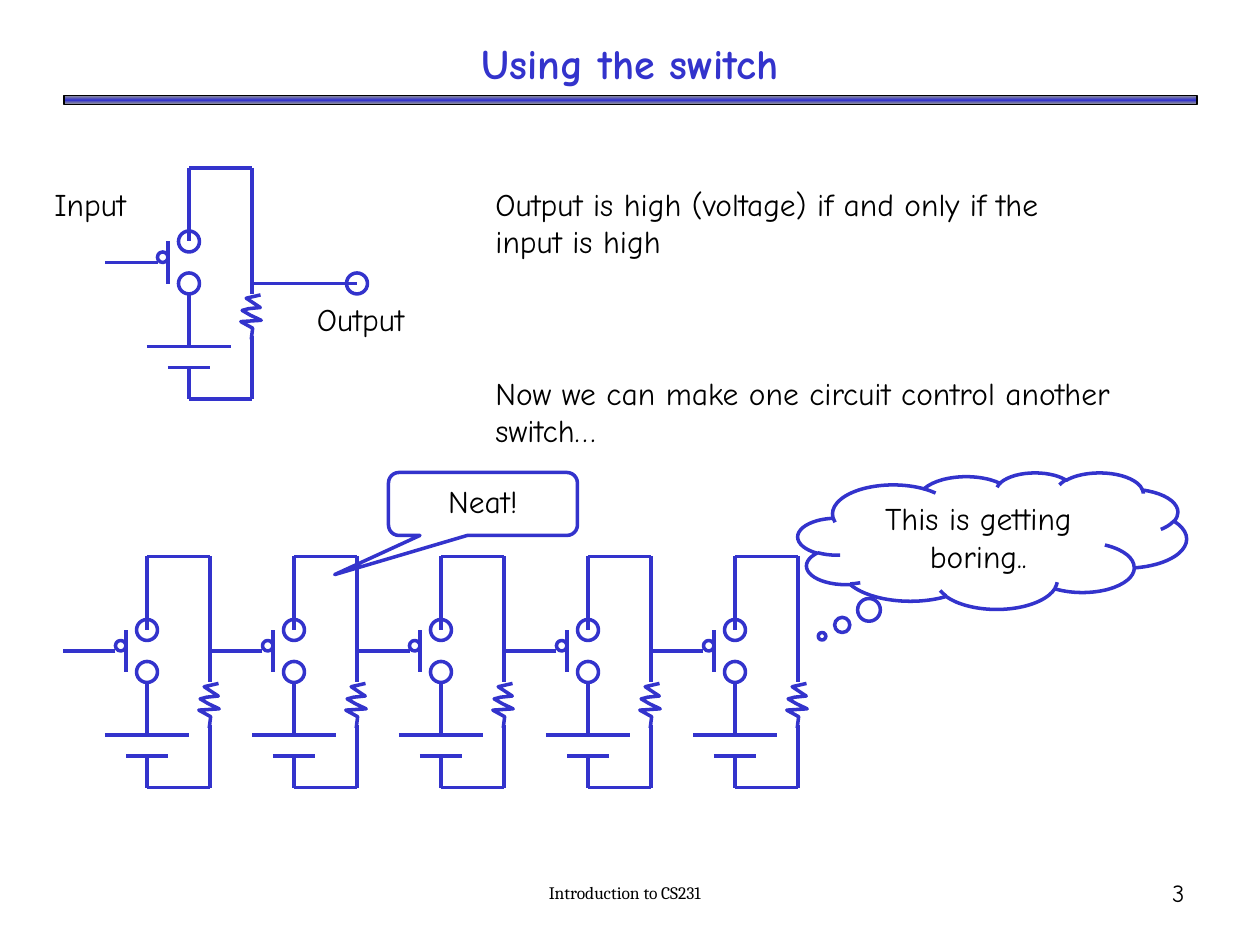
import copy
from dataclasses import dataclass

import lxml.etree
import pptx
import pptx.dml.color
import pptx.enum.shapes
import pptx.enum.text
import pptx.oxml.ns
import pptx.util

Cm = pptx.util.Cm
Align = pptx.enum.text.PP_ALIGN
Anchor = pptx.enum.text.MSO_ANCHOR
Shape = pptx.enum.shapes.MSO_SHAPE


@dataclass(frozen=True)
class Theme:
    ink: str = "000000"
    accent: str = "3333CC"
    rule_edge: str = "969696"
    font: str = "Comic Neue"
    footer_font: str = "Cambria"
    title_size: int = 24
    text_size: int = 18
    number_size: int = 14
    footer_size: int = 10
    wire_width: int = 2


THEME = Theme()

# Content: every position and size is in grid steps, twelve to the inch
STEP = 2.54 / 12
TITLE = ("Using the switch", (6, 3, 108, 6))
TITLE_RULE = (6.1, 9.1, 107.9, 0.85)
FOOTER = ("Introduction to CS231", (36, 82, 47, 6))
PAGE_NUMBER = ("3", (89, 82, 25, 6))
NOTES = [
    ("Output", (29, 28, 14, 4.8)),
    ("Input", (4, 17, 12, 4.8)),
    ("Output is high (voltage) if and only if the input is high", (46, 17, 57, 8.4)),
    ("Now we can make one circuit control another switch…", (46, 35, 64, 8.4)),
]
CALLOUTS = [
    ("Neat!", Shape.ROUNDED_RECTANGULAR_CALLOUT, (37, 45, 18, 6), (-0.785, 1.122, 0.167)),
    ("This is getting boring..", Shape.CLOUD_CALLOUT, (76, 45, 37, 13), (-0.438, 0.7)),
]

# One switch circuit, measured from its input wire's left end and its top wire
CIRCUIT_WIRES = [
    (8, 0, 8, 7), (8, 0, 14, 0), (14, 0, 14, 12),         # top loop
    (14, 16, 14, 22), (8, 22, 14, 22), (8, 19, 8, 22),    # bottom loop
    (8, 12, 8, 17), (4, 17, 12, 17), (6, 19, 10, 19),     # battery
    (6, 11, 6, 7), (5, 9, 0, 9),                          # switch bar and input
]
CIRCUIT_RINGS = [(7, 6, 2), (7, 10, 2), (5, 8, 1)]        # left, top, diameter
RESISTOR_CORNER = (13, 12)
RESISTOR_TILT = 7
RESISTOR_POINTS = [                                       # hundredths of an inch
    (13, 0), (2, 4), (14, 10), (5, 12), (0, 14),
    (7, 17), (16, 20), (0, 23), (10, 27), (10, 36),
]

SINGLE_CIRCUIT = (10, 16)
OUTPUT_WIRE = (24, 27, 34, 27)
OUTPUT_RING = (33, 26, 2)
CHAIN_START = (6, 53)
CHAIN_PITCH = 14
CHAIN_LENGTH = 5


def grid(*steps):
    return [Cm(step * STEP) for step in steps]


def color(code):
    return pptx.dml.color.RGBColor.from_string(code)


def outline(shape):
    shape.line.color.rgb = color(THEME.accent)
    shape.line.width = pptx.util.Pt(THEME.wire_width)


def hollow(shape):
    shape.shadow.inherit = False
    shape.fill.background()
    outline(shape)


def write(shape, text, size=THEME.text_size, align=Align.LEFT, anchor=Anchor.TOP,
          font=THEME.font, ink=THEME.ink, bold=False):
    frame = shape.text_frame
    frame.word_wrap = True
    frame.auto_size = pptx.enum.text.MSO_AUTO_SIZE.NONE
    frame.vertical_anchor = anchor
    frame.text = text
    para = frame.paragraphs[0]
    para.alignment = align
    para.font.name = font
    para.font.size = pptx.util.Pt(size)
    para.font.bold = bold
    para.font.color.rgb = color(ink)


def add_wire(shapes, ends):
    wire = shapes.add_connector(pptx.enum.shapes.MSO_CONNECTOR.STRAIGHT, *grid(*ends))
    outline(wire)
    lxml.etree.SubElement(wire._element.spPr, pptx.oxml.ns.qn("a:effectLst"))


def add_ring(shapes, left, top, diameter):
    hollow(shapes.add_shape(Shape.OVAL, *grid(left, top, diameter, diameter)))


def add_resistor(shapes, left, top):
    points = [(Cm(left * STEP + x * 0.0254), Cm(top * STEP + y * 0.0254))
              for x, y in RESISTOR_POINTS]
    builder = shapes.build_freeform(*points[0], scale=1.0)
    builder.add_line_segments(points[1:], close=False)
    resistor = builder.convert_to_shape()
    resistor.rotation = RESISTOR_TILT
    hollow(resistor)


def add_circuit(page, left, top):
    shapes = page.shapes.add_group_shape().shapes
    for x1, y1, x2, y2 in CIRCUIT_WIRES:
        add_wire(shapes, (left + x1, top + y1, left + x2, top + y2))
    for x, y, diameter in CIRCUIT_RINGS:
        add_ring(shapes, left + x, top + y, diameter)
    add_resistor(shapes, left + RESISTOR_CORNER[0], top + RESISTOR_CORNER[1])


def add_title(page):
    text, place = TITLE
    title = page.shapes.title
    title.left, title.top, title.width, title.height = grid(*place)
    write(title, text, THEME.title_size, Align.CENTER, Anchor.MIDDLE,
          ink=THEME.accent, bold=True)

    # Rule below the title, grey at both edges and blue in the middle
    rule = page.shapes.add_shape(Shape.RECTANGLE, *grid(*TITLE_RULE))
    rule.shadow.inherit = False
    rule.line.color.rgb = color(THEME.ink)
    rule.line.width = pptx.util.Pt(1)
    rule.fill.gradient()
    rule.fill.gradient_angle = 90
    stops = rule._element.spPr.find(".//" + pptx.oxml.ns.qn("a:gsLst"))
    stops.insert(1, copy.deepcopy(stops[0]))
    codes = (THEME.rule_edge, THEME.accent, THEME.rule_edge)
    for stop, code, position in zip(rule.fill.gradient_stops, codes, (0, 0.5, 1)):
        stop.color.rgb = color(code)
        stop.position = position


def main():
    deck = pptx.Presentation()
    deck.slide_width, deck.slide_height = Cm(25.4), Cm(19.05)
    page = deck.slides.add_slide(deck.slide_layouts[5])
    add_title(page)

    # Footer and page number
    for (text, place), size, align, font in (
        (FOOTER, THEME.footer_size, Align.CENTER, THEME.footer_font),
        (PAGE_NUMBER, THEME.number_size, Align.RIGHT, THEME.font),
    ):
        write(page.shapes.add_textbox(*grid(*place)), text, size, align, Anchor.MIDDLE, font)

    # Single circuit with its output
    add_circuit(page, *SINGLE_CIRCUIT)
    add_wire(page.shapes, OUTPUT_WIRE)
    add_ring(page.shapes, *OUTPUT_RING)

    # Chain of circuits, each driving the next
    left, top = CHAIN_START
    for index in range(CHAIN_LENGTH):
        add_circuit(page, left + index * CHAIN_PITCH, top)

    # Labels and statements
    for text, place in NOTES:
        write(page.shapes.add_textbox(*grid(*place)), text)

    # Callouts
    for text, kind, place, adjustments in CALLOUTS:
        callout = page.shapes.add_shape(kind, *grid(*place))
        for index, value in enumerate(adjustments):
            callout.adjustments[index] = value
        hollow(callout)
        write(callout, text, align=Align.CENTER)

    deck.save("out.pptx")


if __name__ == "__main__":
    main()
